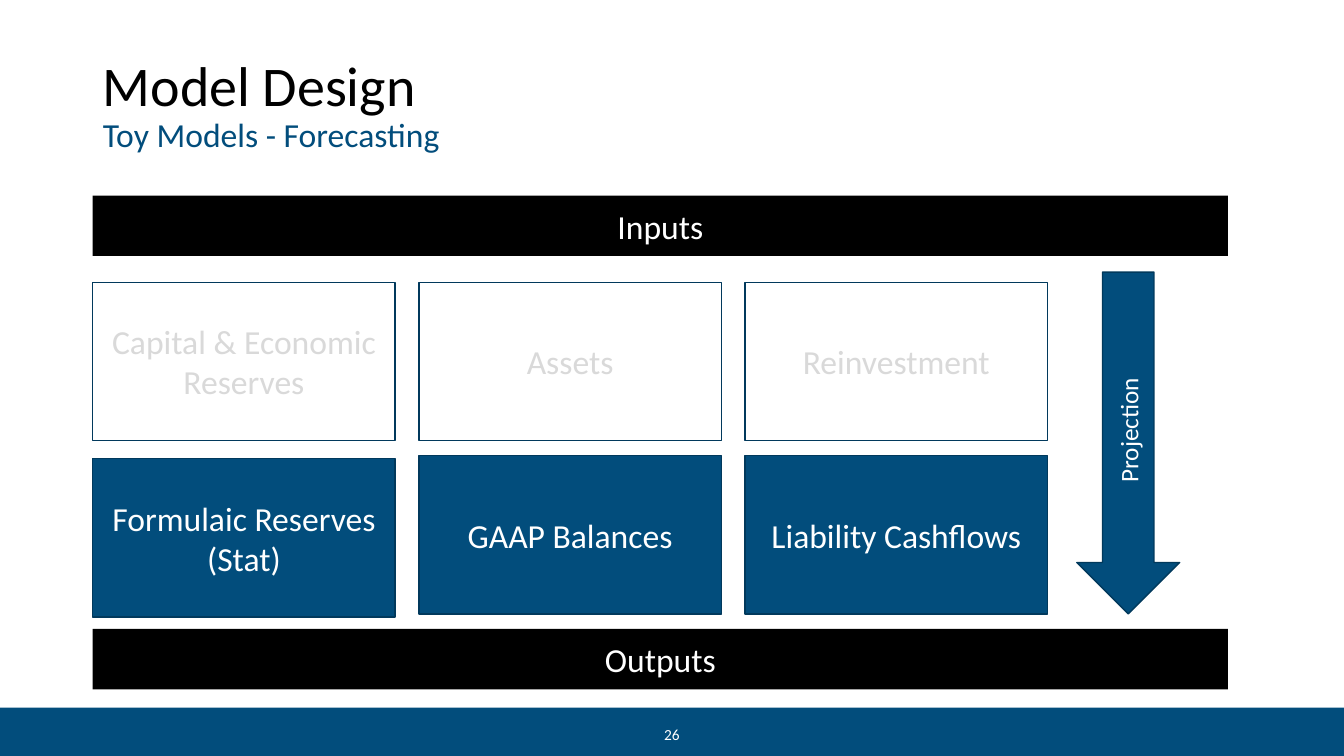
from dataclasses import dataclass

from pptx import Presentation
from pptx.dml.color import RGBColor
from pptx.enum.shapes import MSO_SHAPE
from pptx.enum.text import MSO_ANCHOR, MSO_AUTO_SIZE, PP_ALIGN
from pptx.util import Inches, Pt

RECTANGLE = MSO_SHAPE.RECTANGLE
UP_ARROW = MSO_SHAPE.UP_ARROW
MIDDLE = MSO_ANCHOR.MIDDLE
LEFT, CENTER = PP_ALIGN.LEFT, PP_ALIGN.CENTER
NO_AUTOFIT = MSO_AUTO_SIZE.NONE
TITLE_ONLY_LAYOUT = 5


@dataclass(frozen=True)
class Theme:
    """Colours, font and type sizes of the slide."""

    font: str = "Calibri"
    blue: RGBColor = RGBColor(0x02, 0x4D, 0x7C)
    outline: RGBColor = RGBColor(0x01, 0x39, 0x5C)
    black: RGBColor = RGBColor(0x00, 0x00, 0x00)
    white: RGBColor = RGBColor(0xFF, 0xFF, 0xFF)
    faded: RGBColor = RGBColor(0xD9, 0xD9, 0xD9)
    title: int = 40
    label: int = 24
    arrow: int = 18
    number: int = 11


THEME = Theme()
MARGIN = 0.92
BAR_WIDTH, BAR_HEIGHT = 11.26, 0.6
BOX_WIDTH, BOX_HEIGHT, COLUMN_STEP = 3, 1.57, 3.235
FADED_TOP, ACTIVE_TOP = 2.8, 4.52
COLUMNS = [
    ("Capital & Economic Reserves", "Formulaic Reserves (Stat)", 0.03),
    ("Assets", "GAAP Balances", 0),
    ("Reinvestment", "Liability Cashflows", 0),
]


def style_font(font, size, color):
    """Apply the theme font with a size and colour."""
    font.name = THEME.font
    font.size = Pt(size)
    font.color.rgb = color


def write_centred(shape, text, size, color):
    """Put one centred paragraph in the middle of a shape."""
    frame = shape.text_frame
    frame.word_wrap = True
    frame.vertical_anchor = MIDDLE
    paragraph = frame.paragraphs[0]
    paragraph.text = text
    paragraph.alignment = CENTER
    style_font(paragraph.font, size, color)


def add_block(slide, kind, box, fill, outline=None):
    """Add a filled preset shape with an optional outline."""
    shape = slide.shapes.add_shape(kind, *map(Inches, box))
    shape.shadow.inherit = False
    shape.fill.solid()
    shape.fill.fore_color.rgb = fill
    if outline is None:
        shape.line.fill.background()
    else:
        shape.line.color.rgb = outline
        shape.line.width = Pt(1)
    return shape


def add_title(slide, title, subtitle):
    """Fill the title placeholder with a title and a subtitle line."""
    shape = slide.shapes.title
    shape.left, shape.top = Inches(MARGIN), Inches(0.36)
    shape.width, shape.height = Inches(11.5), Inches(1.4)
    frame = shape.text_frame
    frame.auto_size = NO_AUTOFIT
    frame.vertical_anchor = MIDDLE
    paragraph = frame.paragraphs[0]
    paragraph.alignment = LEFT
    paragraph.line_spacing = 0.9
    title_run = paragraph.add_run()
    title_run.text = title
    style_font(title_run.font, THEME.title, THEME.black)
    paragraph.add_line_break()
    subtitle_run = paragraph.add_run()
    subtitle_run.text = subtitle
    style_font(subtitle_run.font, THEME.label, THEME.blue)


def add_bar(slide, top, text):
    """Add a full-width black bar with a label."""
    bar = add_block(slide, RECTANGLE, (MARGIN, top, BAR_WIDTH, BAR_HEIGHT), THEME.black)
    write_centred(bar, text, THEME.label, THEME.white)


def add_module(slide, left, top, text, fill, color):
    """Add one outlined model component."""
    box = (left, top, BOX_WIDTH, BOX_HEIGHT)
    module = add_block(slide, RECTANGLE, box, fill, THEME.outline)
    write_centred(module, text, THEME.label, color)


def add_projection_arrow(slide):
    """Add the downward arrow with its label reading upwards."""
    arrow = add_block(slide, UP_ARROW, (10.68, 2.7, 1.02, 3.39), THEME.blue, THEME.outline)
    arrow.rotation = 180
    write_centred(arrow, "Projection", THEME.arrow, THEME.white)
    arrow.text_frame._txBody.bodyPr.set("vert", "vert")


def add_footer(slide, number):
    """Add the footer band and the slide number."""
    add_block(slide, RECTANGLE, (0, 7.02, 13.33, 0.48), THEME.blue)
    box = slide.shapes.add_textbox(Inches(6.31), Inches(7.17), Inches(0.71), Inches(0.22))
    write_centred(box, number, THEME.number, THEME.white)


def main():
    """Build and save the slide."""
    presentation = Presentation()
    presentation.slide_width, presentation.slide_height = Inches(13.33), Inches(7.5)
    slide = presentation.slides.add_slide(presentation.slide_layouts[TITLE_ONLY_LAYOUT])
    add_footer(slide, "26")
    add_title(slide, "Model Design", "Toy Models - Forecasting")
    add_bar(slide, 1.94, "Inputs")
    for index, (faded, active, drop) in enumerate(COLUMNS):
        left = MARGIN + index * COLUMN_STEP
        add_module(slide, left, FADED_TOP, faded, THEME.white, THEME.faded)
        add_module(slide, left, ACTIVE_TOP + drop, active, THEME.blue, THEME.white)
    add_bar(slide, 6.24, "Outputs")
    add_projection_arrow(slide)
    presentation.save("out.pptx")


if __name__ == "__main__":
    main()
